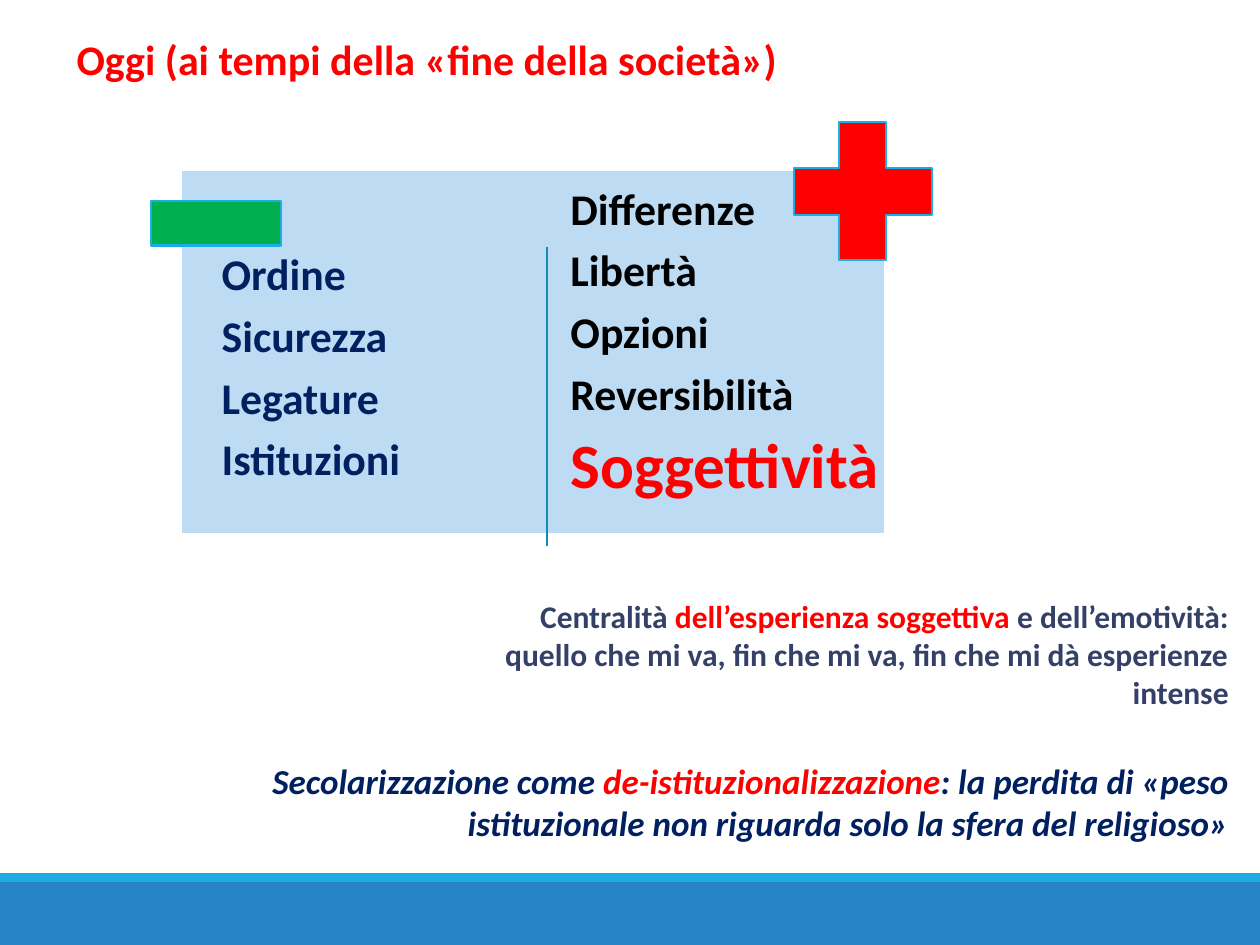
from pptx import Presentation
from pptx.util import Pt
from pptx.dml.color import RGBColor
from pptx.enum.shapes import MSO_CONNECTOR, MSO_SHAPE
from pptx.enum.text import PP_ALIGN
from lxml.etree import SubElement

C = {"blue": "2683C6", "cyan": "1CADE4", "panel": "BDDBF2", "white": "FFFFFF",
     "navy": "002060", "slate": "344068", "red": "FF0000", "green": "00B050",
     "black": "000000", "divider": "168BB7"}

# Content: paragraphs are lists of (text, size, colour) runs
LOSSES = [[(w, 25, "navy")] for w in ("Ordine", "Sicurezza", "Legature", "Istituzioni")]
GAINS = [[(w, 25, "black")] for w in ("Differenze", "Libertà", "Opzioni", "Reversibilità")]
GAINS.append([("Soggettività", 36, "red")])
TITLE = [[("Oggi (ai tempi della «fine della società»)", 24, "red")]]
SECULAR = [[("Secolarizzazione come ", 20, "navy"),
            ("de-istituzionalizzazione", 20, "red"),
            (": la perdita di «peso istituzionale non riguarda solo la sfera del religioso»",
             20, "navy")]]
EXPERIENCE = [[("Centralità ", 18, "slate"),
               ("dell’esperienza soggettiva ", 18, "red"),
               ("e dell’emotività: quello che mi va, fin che mi va, "
                "fin che mi dà esperienze intense", 18, "slate")]]

# (preset, left, top, width, height, fill, line)
FOOTER = [(MSO_SHAPE.RECTANGLE, 0, 504, 720, 36, "blue", None),
          (MSO_SHAPE.RECTANGLE, 0, 499, 720, 5, "cyan", None)]
PANEL = (MSO_SHAPE.RECTANGLE, 103.2, 97.2, 402.5, 208, "panel", "white")
PLUS = (MSO_SHAPE.CROSS, 453.6, 69.8, 78.9, 78.9, "red", "cyan")
MINUS = (MSO_SHAPE.RECTANGLE, 86.2, 114.8, 74.4, 25.5, "green", "cyan")

prs = Presentation()
prs.slide_width, prs.slide_height = Pt(720), Pt(540)
s = prs.slides.add_slide(prs.slide_layouts[6])


def rgb(name):
    return RGBColor.from_string(C[name])


def add_block(kind, x, y, w, h, fill, line):
    sp = s.shapes.add_shape(kind, Pt(x), Pt(y), Pt(w), Pt(h))
    sp.shadow.inherit = False
    sp.fill.solid()
    sp.fill.fore_color.rgb = rgb(fill)
    if line:
        sp.line.color.rgb = rgb(line)
        sp.line.width = Pt(1.25)
    else:
        sp.line.fill.background()
    return sp


def add_text(paras, x, y, w, h, align=PP_ALIGN.LEFT, italic=False, listing=False):
    tf = s.shapes.add_textbox(Pt(x), Pt(y), Pt(w), Pt(h)).text_frame
    tf.word_wrap = True
    if listing:
        tf.margin_left = tf.margin_right = tf.margin_top = tf.margin_bottom = Pt(3.6)
    for i, runs in enumerate(paras):
        p = tf.add_paragraph() if i else tf.paragraphs[0]
        p.alignment = align
        if listing:
            p.line_spacing = 0.9
            p.space_after = Pt(8.2)
        for text, size, colour in runs:
            r = p.add_run()
            r.text = text
            r.font.name = "Calibri"
            r.font.size = Pt(size)
            r.font.bold = True
            r.font.italic = italic
            r.font.color.rgb = rgb(colour)


# Footer bands
for band in FOOTER:
    add_block(*band)

# Panel with the two lists
add_block(*PANEL)
add_text(LOSSES, 123.1, 141.1, 187.2, 177.8, listing=True)
add_text(GAINS, 322.4, 103.7, 187.2, 177.8, listing=True)

# Plus and minus signs
plus = add_block(*PLUS)
plus.adjustments[0] = 0.33
add_block(*MINUS)

# Divider between the lists
cx = s.shapes.add_connector(MSO_CONNECTOR.STRAIGHT, Pt(312.5), Pt(141.1), Pt(312.5), Pt(311.8))
cx.line.color.rgb = rgb("divider")
cx.line.width = Pt(1.25)
SubElement(cx._element.spPr, "{http://schemas.openxmlformats.org/drawingml/2006/main}effectLst")

# Title and closing remarks
add_text(TITLE, 36.7, 15.8, 599.8, 36)
add_text(SECULAR, 146.9, 430.6, 562.3, 55.4, PP_ALIGN.RIGHT, italic=True)
add_text(EXPERIENCE, 270.7, 337.7, 438.5, 72.7, PP_ALIGN.RIGHT)

prs.save("out.pptx")
